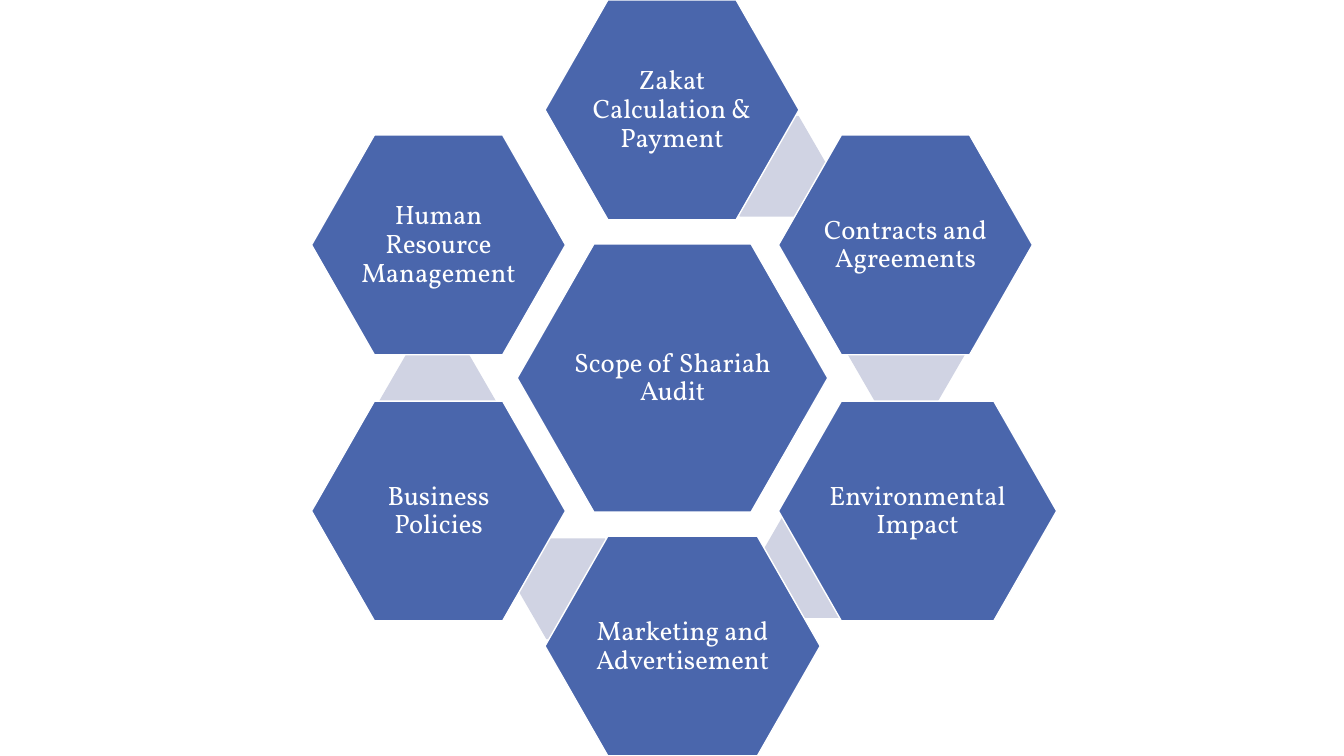
"""Build a slide with the scope of a Shariah audit as a ring of hexagons."""
from dataclasses import dataclass
from typing import Optional

from pptx import Presentation, util as u
from pptx.dml.color import RGBColor
from pptx.enum import shapes, text


@dataclass(frozen=True)
class Theme:
    node: RGBColor = RGBColor.from_string("4A66AC")
    link: RGBColor = RGBColor.from_string("D0D3E3")
    light: RGBColor = RGBColor.from_string("FFFFFF")
    font: str = "Vollkorn"
    size: u.Pt = u.Pt(19)
    border: u.Pt = u.Pt(1)
    inset: u.Inches = u.Inches(0.03)
    spacing: float = 0.9


@dataclass(frozen=True)
class Box:
    """Left, top, width and height as percentages of the slide."""
    x: float
    y: float
    w: float
    h: float


@dataclass(frozen=True)
class Topic:
    label: str
    col: int
    row: int
    width: float = 18.9
    link: Optional[tuple[float, float]] = None


THEME = Theme()
WIDTH, HEIGHT = u.Inches(13.33), u.Inches(7.5)
COLS = [23.18 + 17.37 * i for i in range(3)]
NODE_H = 29.07
ROWS = [0, 17.87, 100 - NODE_H - 17.87, 100 - NODE_H]
LINK_W, LINK_H = 8.7, 13.33
NODE_ADJ, LINK_ADJ = 0.286, 0.289
CENTRE = Box(38.48, 32.27, 23.11, 35.47)
TOPICS = [
    Topic("Zakat Calculation & Payment", 1, 0, link=(52.89, 15.33)),
    Topic("Contracts and Agreements", 2, 1, link=(63.09, 40.27)),
    Topic("Environmental Impact", 2, 2, 20.7, (56.04, 68.4)),
    Topic("Marketing and Advertisement", 1, 3, 20.48, (38.48, 71.2)),
    Topic("Business Policies", 0, 2, link=(28.21, 46.4)),
    Topic("Human Resource Management", 0, 1),
]


def add_hexagon(s, box: Box, adj: float, color: RGBColor):
    """Add a plain hexagon and return it."""
    sp = s.shapes.add_shape(
        shapes.MSO_SHAPE.HEXAGON,
        round(WIDTH * box.x / 100), round(HEIGHT * box.y / 100),
        round(WIDTH * box.w / 100), round(HEIGHT * box.h / 100))
    sp.adjustments[0] = adj
    sp.shadow.inherit = False
    sp.fill.solid()
    sp.fill.fore_color.rgb = color
    sp.line.fill.background()
    return sp


def add_node(s, box: Box, label: str) -> None:
    """Add an outlined hexagon with a centred label."""
    sp = add_hexagon(s, box, NODE_ADJ, THEME.node)
    sp.line.color.rgb = THEME.light
    sp.line.width = THEME.border
    tf = sp.text_frame
    tf.word_wrap = True
    tf.vertical_anchor = text.MSO_ANCHOR.MIDDLE
    tf.margin_left = tf.margin_right = THEME.inset
    tf.margin_top = tf.margin_bottom = THEME.inset
    p = tf.paragraphs[0]
    p.alignment = text.PP_ALIGN.CENTER
    p.line_spacing = THEME.spacing
    r = p.add_run()
    r.text = label
    r.font.name = THEME.font
    r.font.size = THEME.size
    r.font.color.rgb = THEME.light


def main() -> None:
    """Draw the centre and its ring of topics, then save."""
    prs = Presentation()
    prs.slide_width, prs.slide_height = WIDTH, HEIGHT
    s = prs.slides.add_slide(prs.slide_layouts[6])
    add_node(s, CENTRE, "Scope of Shariah Audit")
    for topic in TOPICS:
        if topic.link:
            add_hexagon(s, Box(*topic.link, LINK_W, LINK_H), LINK_ADJ, THEME.link)
        box = Box(COLS[topic.col], ROWS[topic.row], topic.width, NODE_H)
        add_node(s, box, topic.label)
    prs.save("out.pptx")


if __name__ == "__main__":
    main()
